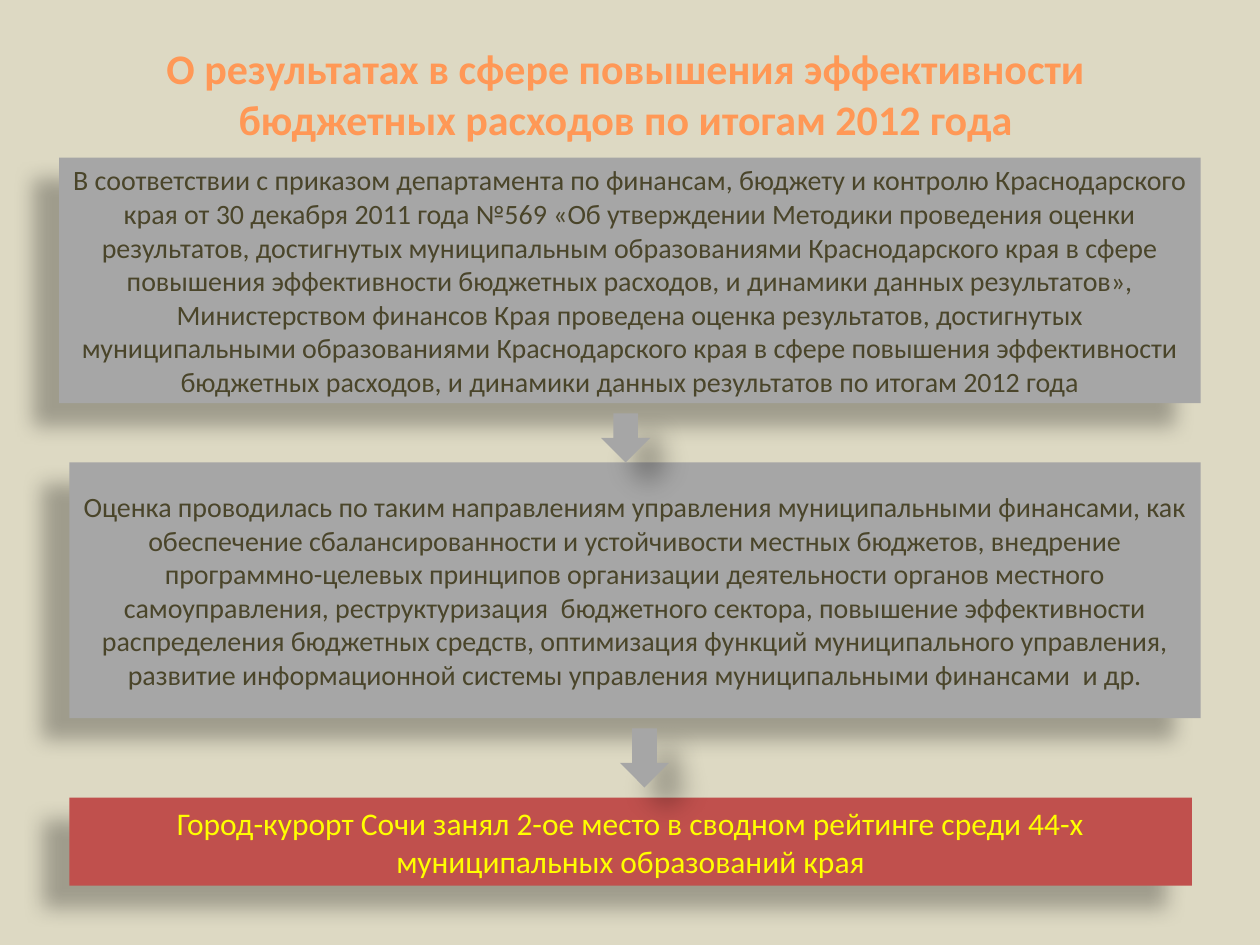
from lxml import etree
from pptx import Presentation, util as u
from pptx.dml.color import RGBColor
from pptx.enum import shapes, text
from pptx.oxml import ns

SAND = RGBColor(0xDD, 0xD9, 0xC3)
GREY = RGBColor(0xA6, 0xA6, 0xA6)
RED = RGBColor(0xC0, 0x50, 0x4D)
OLIVE = RGBColor(0x4A, 0x45, 0x2A)
YELLOW = RGBColor(0xFF, 0xFF, 0x00)
ORANGE = RGBColor(0xFF, 0x98, 0x56)

WIDTH, HEIGHT = u.Inches(10), u.Inches(7.5)
BOX_SHADOW = {"alpha": 28, "blur": 11.8, "distance": 19.7, "angle": 141}
ARROW_SHADOW = {"alpha": 30, "blur": 15, "distance": 18, "angle": 45}

TITLE = "О результатах в сфере повышения эффективности бюджетных расходов по итогам 2012 года"
ORDER = (
    "В соответствии с приказом департамента по финансам, бюджету и контролю "
    "Краснодарского края от 30 декабря 2011 года №569 «Об утверждении Методики "
    "проведения оценки результатов, достигнутых муниципальным образованиями "
    "Краснодарского края в сфере повышения эффективности бюджетных расходов, и "
    "динамики данных результатов», Министерством финансов Края проведена оценка "
    "результатов, достигнутых муниципальными образованиями Краснодарского края в "
    "сфере повышения эффективности бюджетных расходов, и динамики данных "
    "результатов по итогам 2012 года"
)
CRITERIA = (
    "Оценка проводилась по таким направлениям управления муниципальными финансами, "
    "как обеспечение сбалансированности и устойчивости местных бюджетов, внедрение "
    "программно-целевых принципов организации деятельности органов местного "
    "самоуправления, реструктуризация  бюджетного сектора, повышение эффективности "
    "распределения бюджетных средств, оптимизация функций муниципального управления, "
    "развитие информационной системы управления муниципальными финансами  и др."
)
RESULT = (
    "Город-курорт Сочи занял 2-ое место в сводном рейтинге среди 44-х "
    "муниципальных образований края"
)


def area(left, top, width, height):
    """Turn percentages of the slide's size into lengths."""
    return [int(share * side / 100) for share, side in
            zip((left, top, width, height), (WIDTH, HEIGHT) * 2)]


def write(box, words, size, colour, bold=False):
    """Put one centred run of text in the middle of a box."""
    frame = box.text_frame
    frame.word_wrap = True
    frame.auto_size = text.MSO_AUTO_SIZE.NONE
    frame.vertical_anchor = text.MSO_ANCHOR.MIDDLE
    para = frame.paragraphs[0]
    para.alignment = text.PP_ALIGN.CENTER
    span = para.add_run()
    span.text = words
    span.font.name = "Calibri"
    span.font.size = u.Pt(size)
    span.font.bold = bold
    span.font.color.rgb = colour


def cast_shadow(shape, alpha, blur, distance, angle):
    """Give a shape a soft black outer shadow."""
    shape.shadow.inherit = False
    effects = shape._element.spPr.find(ns.qn("a:effectLst"))
    outer = etree.SubElement(
        effects, ns.qn("a:outerShdw"), blurRad=str(u.Pt(blur)),
        dist=str(u.Pt(distance)), dir=str(angle * 60000), algn="ctr", rotWithShape="0")
    black = etree.SubElement(outer, ns.qn("a:srgbClr"), val="000000")
    etree.SubElement(black, ns.qn("a:alpha"), val=str(alpha * 1000))


def add_block(page, kind, place, fill, shadow):
    """Add a filled shape without outline and with a shadow."""
    block = page.shapes.add_shape(kind, *area(*place))
    block.fill.solid()
    block.fill.fore_color.rgb = fill
    block.line.fill.background()
    cast_shadow(block, **shadow)
    return block


def add_panel(page, place, fill, words, size, colour):
    """Add a rectangle that holds one statement."""
    panel = add_block(page, shapes.MSO_SHAPE.RECTANGLE, place, fill, BOX_SHADOW)
    write(panel, words, size, colour)


def add_arrow(page, place):
    """Add a down arrow between two panels."""
    add_block(page, shapes.MSO_SHAPE.DOWN_ARROW, place, GREY, ARROW_SHADOW)


def set_title(page, place, words):
    """Move the title placeholder and fill it."""
    title = page.shapes.title
    title.left, title.top, title.width, title.height = area(*place)
    write(title, words, 24, ORANGE, bold=True)


def main():
    """Build the slide and save the deck."""
    deck = Presentation()
    deck.slide_width, deck.slide_height = WIDTH, HEIGHT
    page = deck.slides.add_slide(deck.slide_layouts[5])
    page.background.fill.solid()
    page.background.fill.fore_color.rgb = SAND

    set_title(page, (5.5, 5.2, 88.3, 9.33), TITLE)
    add_panel(page, (4.7, 16.67, 90.6, 26), GREY, ORDER, 16, OLIVE)
    add_panel(page, (5.5, 48.93, 89.8, 27.07), GREY, CRITERIA, 16, OLIVE)
    add_panel(page, (5.5, 84.4, 89.1, 9.33), RED, RESULT, 18, YELLOW)
    add_arrow(page, (47.7, 43.73, 3.9, 5.2))
    add_arrow(page, (49.2, 77.07, 3.9, 6.27))
    deck.save("out.pptx")


if __name__ == "__main__":
    main()
